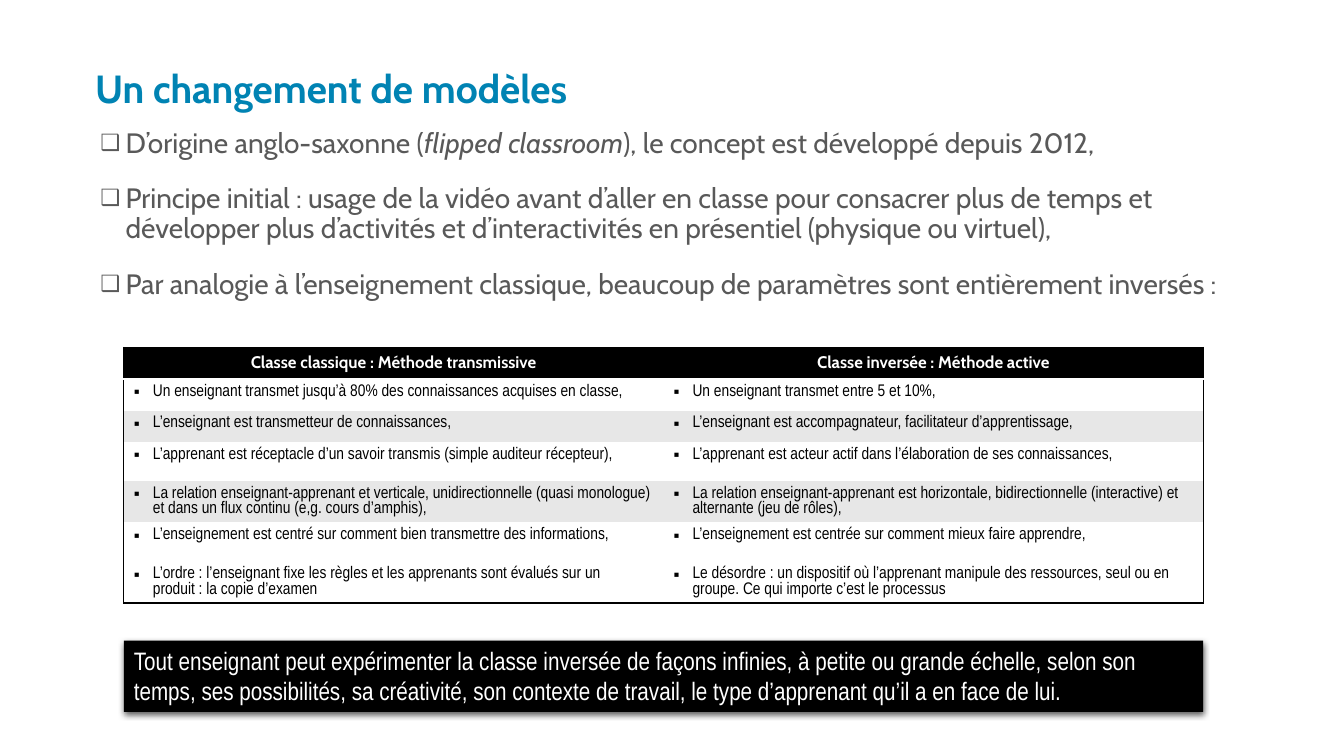
from lxml.etree import SubElement
from pptx import Presentation
from pptx.dml.color import RGBColor
from pptx.enum.shapes import MSO_SHAPE
from pptx.enum.text import MSO_ANCHOR, MSO_AUTO_SIZE, PP_ALIGN
from pptx.oxml.ns import qn
from pptx.util import Pt

EMU_PER_PX = 9525
BLACK, WHITE, BAND = "000000", "FFFFFF", "E7E7E7"
BLUE, GREY = "0083B3", "595959"
HEADING_FONT, TABLE_FONT = "Cabin", "Arial Narrow"

TITLE = "Un changement de modèles"
POINTS = [
    ["D’origine anglo-saxonne (", "flipped classroom",
     "), le concept est développé depuis 2012,"],
    ["Principe initial : usage de la vidéo avant d’aller en classe pour consacrer plus de temps "
     "et développer plus d’activités et d’interactivités en présentiel (physique ou virtuel),"],
    ["Par analogie à l’enseignement classique, beaucoup de paramètres sont entièrement inversés :"],
]
COMPARISON = [
    ("Classe classique : Méthode transmissive", "Classe inversée : Méthode active"),
    ("Un enseignant transmet jusqu’à 80% des connaissances acquises en classe,",
     "Un enseignant transmet entre 5 et 10%,"),
    ("L’enseignant est transmetteur de connaissances,",
     "L’enseignant est accompagnateur, facilitateur d’apprentissage,"),
    ("L’apprenant est réceptacle d’un savoir transmis (simple auditeur récepteur),",
     "L’apprenant est acteur actif dans l’élaboration de ses connaissances,"),
    ("La relation enseignant-apprenant et verticale, unidirectionnelle (quasi monologue) "
     "et dans un flux continu (e,g. cours d’amphis),",
     "La relation enseignant-apprenant est horizontale, bidirectionnelle (interactive) "
     "et alternante (jeu de rôles),"),
    ("L’enseignement est centré sur comment bien transmettre des informations,",
     "L’enseignement est centrée sur comment mieux faire apprendre,"),
    ("L’ordre : l’enseignant fixe les règles et les apprenants sont évalués sur un produit : "
     "la copie d’examen",
     "Le désordre : un dispositif où l’apprenant manipule des ressources, seul ou en groupe. "
     "Ce qui importe c’est le processus"),
]
ROW_HEIGHTS = [30, 30, 30, 37, 37, 37, 37]
CONCLUSION = (
    "Tout enseignant peut expérimenter la classe inversée de façons infinies, à petite ou grande "
    "échelle, selon son temps, ses possibilités, sa créativité, son contexte de travail, le type "
    "d’apprenant qu’il a en face de lui."
)


def px(length):
    return length * EMU_PER_PX


def rgb(colour):
    return RGBColor.from_string(colour)


def style(font, name, size, colour, bold=False):
    font.name, font.size, font.bold = name, Pt(size), bold
    font.color.rgb = rgb(colour)


def place(placeholder, box):
    placeholder.left, placeholder.top, placeholder.width, placeholder.height = map(px, box)


def add_bullet(paragraph, mark, left, hanging, colour, percent=100):
    props = paragraph._p.get_or_add_pPr()
    props.set("marL", str(px(left)))
    props.set("indent", str(-px(hanging)))
    SubElement(SubElement(props, qn("a:buClr")), qn("a:srgbClr"), val=colour)
    SubElement(props, qn("a:buSzPct"), val=str(percent * 1000))
    SubElement(props, qn("a:buFont"), typeface="Arial")
    SubElement(props, qn("a:buChar"), char=mark)


def add_borders(cell, borders):
    props = cell._tc.get_or_add_tcPr()
    for side in "LRTB":
        if side in borders:
            colour, points = borders[side]
            line = SubElement(props, qn(f"a:ln{side}"), w=str(Pt(points)))
            SubElement(SubElement(line, qn("a:solidFill")), qn("a:srgbClr"), val=colour)


def add_shadow(shape):
    effects = SubElement(shape.element.spPr, qn("a:effectLst"))
    shadow = SubElement(effects, qn("a:outerShdw"), blurRad=str(Pt(4.5)), dist=str(Pt(1.5)),
                        dir="5400000", rotWithShape="0")
    colour = SubElement(shadow, qn("a:srgbClr"), val=BLACK)
    SubElement(colour, qn("a:alpha"), val="63000")


def fill_title(slide, box):
    title = slide.shapes.title
    place(title, box)
    frame = title.text_frame
    frame.text = TITLE
    frame.auto_size = MSO_AUTO_SIZE.NONE
    frame.vertical_anchor = MSO_ANCHOR.BOTTOM
    heading = frame.paragraphs[0]
    heading.alignment = PP_ALIGN.LEFT
    heading.line_spacing = 0.8
    style(heading.runs[0].font, HEADING_FONT, 28, BLUE, bold=True)


def fill_points(slide, box):
    body = slide.placeholders[1]
    place(body, box)
    frame = body.text_frame
    frame.auto_size = MSO_AUTO_SIZE.NONE
    for index, parts in enumerate(POINTS):
        point = frame.add_paragraph() if index else frame.paragraphs[0]
        point.line_spacing = 0.9
        point.space_before = Pt(18 if index else 0)
        add_bullet(point, "❑", 29, 24, GREY, 80)
        for part in parts:
            run = point.add_run()
            run.text = part
            style(run.font, HEADING_FONT, 20, GREY)
            run.font.italic = part == "flipped classroom"


def cell_borders(row, column):
    borders = {"R" if column else "L": (BLACK, 1)}
    if row == 0:
        borders.update(T=(BLACK, 1), B=(WHITE, 2))
    elif row == len(COMPARISON) - 1:
        borders["B"] = (BLACK, 1)
    return borders


def add_comparison(slide, left, top, width):
    frame = slide.shapes.add_table(len(COMPARISON), 2, px(left), px(top),
                                   px(width), px(sum(ROW_HEIGHTS)))
    for style_id in frame.element.iter(qn("a:tableStyleId")):
        style_id.text = "{2D5ABB26-0587-4C30-8999-92F81FD0307C}"
    table = frame.table
    table.horz_banding = False
    for row, texts in enumerate(COMPARISON):
        table.rows[row].height = px(ROW_HEIGHTS[row])
        for column, text in enumerate(texts):
            cell = table.cell(row, column)
            cell.text = text
            add_borders(cell, cell_borders(row, column))
            cell.fill.solid()
            entry = cell.text_frame.paragraphs[0]
            if row == 0:
                cell.fill.fore_color.rgb = rgb(BLACK)
                entry.alignment = PP_ALIGN.CENTER
                style(entry.runs[0].font, HEADING_FONT, 12, WHITE, bold=True)
            else:
                cell.fill.fore_color.rgb = rgb(BAND if row in (2, 4) else WHITE)
                add_bullet(entry, "▪", 18, 18, BLACK)
                style(entry.runs[0].font, TABLE_FONT, 12, BLACK)


def add_conclusion(slide, box):
    banner = slide.shapes.add_shape(MSO_SHAPE.RECTANGLE, *map(px, box))
    banner.fill.solid()
    banner.fill.fore_color.rgb = rgb(BLACK)
    banner.line.fill.background()
    add_shadow(banner)
    frame = banner.text_frame
    frame.text = CONCLUSION
    frame.word_wrap = True
    frame.auto_size = MSO_AUTO_SIZE.SHAPE_TO_FIT_TEXT
    frame.vertical_anchor = MSO_ANCHOR.TOP
    message = frame.paragraphs[0]
    message.alignment = PP_ALIGN.LEFT
    style(message.runs[0].font, TABLE_FONT, 18, WHITE)


def main():
    presentation = Presentation()
    presentation.slide_width, presentation.slide_height = px(1280), px(720)
    slide = presentation.slides.add_slide(presentation.slide_layouts[1])
    fill_points(slide, (81, 118, 1112, 552))
    fill_title(slide, (81, 56, 1112, 55))
    add_comparison(slide, 118, 331, 1028)
    add_conclusion(slide, (118, 610, 1028, 68))
    presentation.save("out.pptx")


if __name__ == "__main__":
    main()
